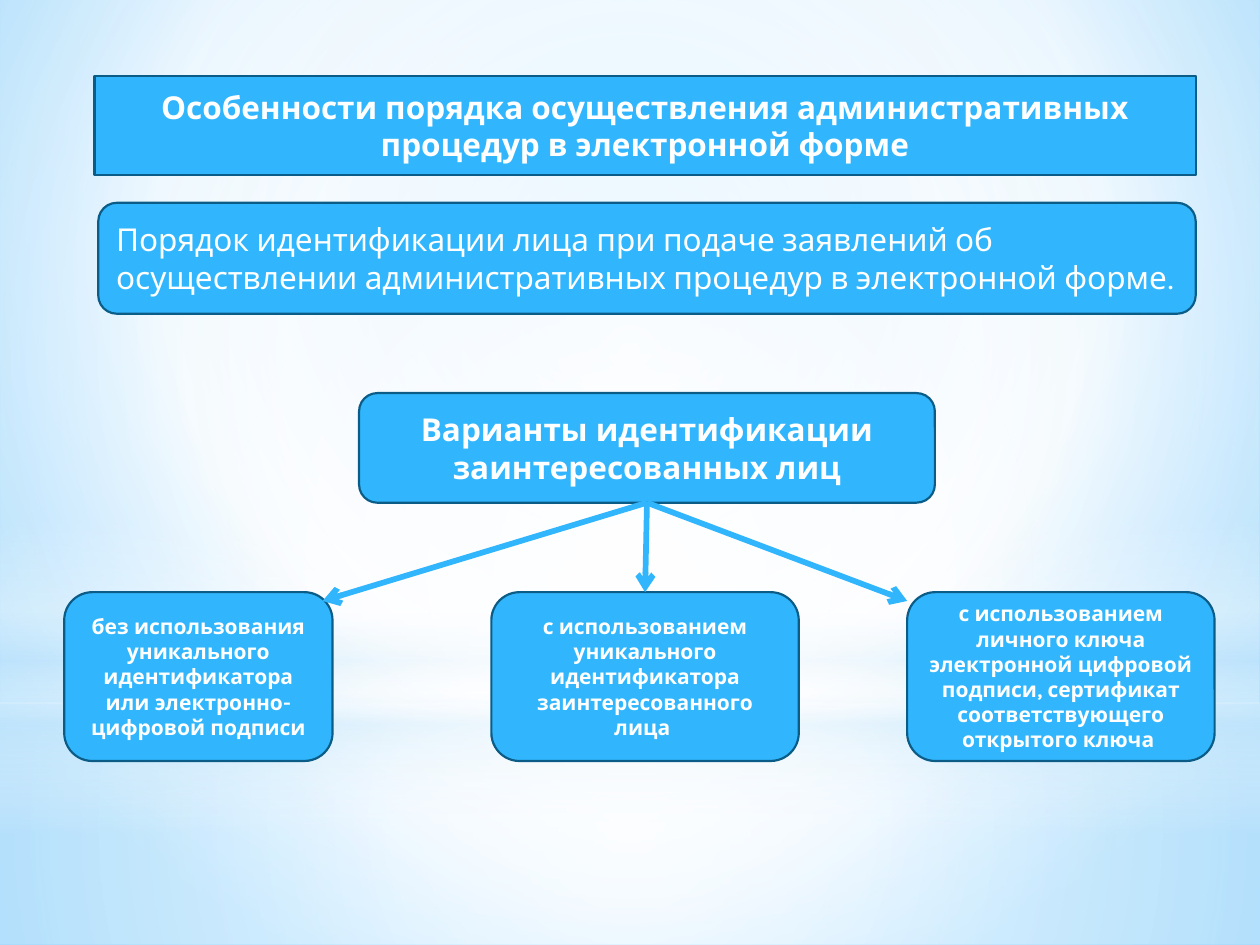
"""Build a slide on the ways to identify a person in electronic procedures."""
from copy import deepcopy

from lxml import etree
from pptx import Presentation
from pptx.dml.color import RGBColor
from pptx.enum.shapes import MSO_CONNECTOR, MSO_SHAPE
from pptx.enum.text import MSO_ANCHOR, MSO_AUTO_SIZE, PP_ALIGN
from pptx.oxml.ns import qn
from pptx.util import Inches, Pt

RECT, OVAL, ROUND = MSO_SHAPE.RECTANGLE, MSO_SHAPE.OVAL, MSO_SHAPE.ROUNDED_RECTANGLE
LEFT, CENTER, MIDDLE = PP_ALIGN.LEFT, PP_ALIGN.CENTER, MSO_ANCHOR.MIDDLE
STRAIGHT, NO_FIT = MSO_CONNECTOR.STRAIGHT, MSO_AUTO_SIZE.NONE
BLUE = RGBColor(0x31, 0xB6, 0xFD)
NAVY = RGBColor(0x0B, 0x5D, 0x88)
WHITE = RGBColor(0xFF, 0xFF, 0xFF)
PALE = RGBColor(0xC6, 0xE7, 0xFC)
SKY = RGBColor(0xB0, 0xE0, 0xFF)
DEEP = RGBColor(0x6B, 0xC5, 0xFF)
FONT = "Karla"
MID = (50, 50, 50, 50)

deck = Presentation()
deck.slide_width, deck.slide_height = Inches(10), Inches(7.5)
COL, ROW = deck.slide_width / 100, deck.slide_height / 75
slide = deck.slides.add_slide(deck.slide_layouts[5])
shapes = slide.shapes


def shade(props, stops, focus):
    """Swap a solid fill for a gradient: round with a focus, else downward."""
    grad = etree.Element(qn("a:gradFill"), rotWithShape="1")
    row = etree.SubElement(grad, qn("a:gsLst"))
    for pos, color, alpha in stops:
        stop = etree.SubElement(row, qn("a:gs"), pos=str(pos * 1000))
        tint = etree.SubElement(stop, qn("a:srgbClr"), val=str(color))
        if alpha < 100:
            etree.SubElement(tint, qn("a:alpha"), val=str(alpha * 1000))
    if focus:
        way = etree.SubElement(grad, qn("a:path"), path="circle")
        sides = {side: str(share * 1000) for side, share in zip("ltrb", focus)}
        etree.SubElement(way, qn("a:fillToRect"), **sides)
    else:
        etree.SubElement(grad, qn("a:lin"), ang="5400000", scaled="0")
    props.replace(props.find(qn("a:solidFill")), grad)


def dress(box, text, size, bold, align):
    """Give a box its fill, outline and text."""
    box.shadow.inherit = False
    box.fill.solid()
    box.fill.fore_color.rgb = BLUE
    box.line.color.rgb = NAVY
    box.line.width = Pt(1.25)
    frame = box.text_frame
    frame.text = text
    frame.word_wrap = True
    frame.auto_size = NO_FIT
    frame.vertical_anchor = MIDDLE
    para = frame.paragraphs[0]
    para.alignment = align
    font = para.font
    font.name, font.size, font.bold = FONT, Pt(size), bold
    font.color.rgb = WHITE


slide.background.fill.solid()
back = slide.element.find(".//" + qn("p:bgPr"))
shade(back, [(0, SKY, 100), (60, WHITE, 100), (100, DEEP, 100)], (20, 10, 20, 60))

glows = [
    (RECT, 55.8, 19.2, [(0, WHITE, 91), (37, WHITE, 76), (100, PALE, 79)], MID),
    (RECT, 0, 55.8, [(0, WHITE, 89), (48, WHITE, 62), (100, PALE, 79)], MID),
    (RECT, 41.2, 25, [(0, WHITE, 0), (29, WHITE, 30), (45, PALE, 40),
                      (55, WHITE, 26), (65, PALE, 60), (100, WHITE, 0)], None),
    (OVAL, 17.5, 55.8, [(0, WHITE, 100), (56, WHITE, 0)], MID),
]
for kind, top, high, stops, focus in glows:
    glow = shapes.add_shape(kind, 0, int(top * ROW), deck.slide_width, int(high * ROW))
    glow.shadow.inherit = False
    glow.line.fill.background()
    glow.fill.solid()
    shade(glow.element.spPr, stops, focus)

boxes = [
    (7.8, 16.1, 87.1, 8.8, 18, False, LEFT,
     "Порядок идентификации лица при подаче заявлений об осуществлении "
     "административных процедур в электронной форме."),
    (28.5, 31.2, 45.7, 8.7, 18, True, CENTER,
     "Варианты идентификации заинтересованных лиц"),
    (5.1, 47, 21.3, 13.4, 12, True, CENTER,
     "без использования уникального идентификатора или "
     "электронно-цифровой подписи"),
    (39, 47, 24.4, 13.4, 12, True, CENTER,
     "с использованием уникального идентификатора заинтересованного лица "),
    (72, 47, 24.4, 13.4, 12, True, CENTER,
     "с использованием личного ключа электронной цифровой подписи, "
     "сертификат соответствующего открытого ключа "),
]
made = []
for left, top, wide, high, size, bold, align, text in boxes:
    box = shapes.add_shape(ROUND, int(left * COL), int(top * ROW),
                           int(wide * COL), int(high * ROW))
    dress(box, text, size, bold, align)
    made.append(box)
order, root, plain, user, key = made

title = shapes.title
title.left, title.top = int(7.5 * COL), int(6 * ROW)
title.width, title.height = int(87.4 * COL), int(7.9 * ROW)
title.element.spPr.insert(1, deepcopy(order.element.spPr.find(qn("a:prstGeom"))))
dress(title, "Особенности порядка осуществления административных "
      "процедур в электронной форме", 18, True, CENTER)
order.element.addprevious(title.element)

for col, row, goal in [(25.6, 47.7, None), (51.2, 47, user), (72, 47.7, None)]:
    arrow = shapes.add_connector(STRAIGHT, 0, 0, int(col * COL), int(row * ROW))
    arrow.begin_connect(root, 2)
    if goal:
        arrow.end_connect(goal, 0)
    arrow.line.color.rgb = BLUE
    arrow.line.width = Pt(3.25)
    etree.SubElement(arrow.line._get_or_add_ln(), qn("a:tailEnd"), type="arrow")
    etree.SubElement(arrow.element.spPr, qn("a:effectLst"))

deck.save("out.pptx")
